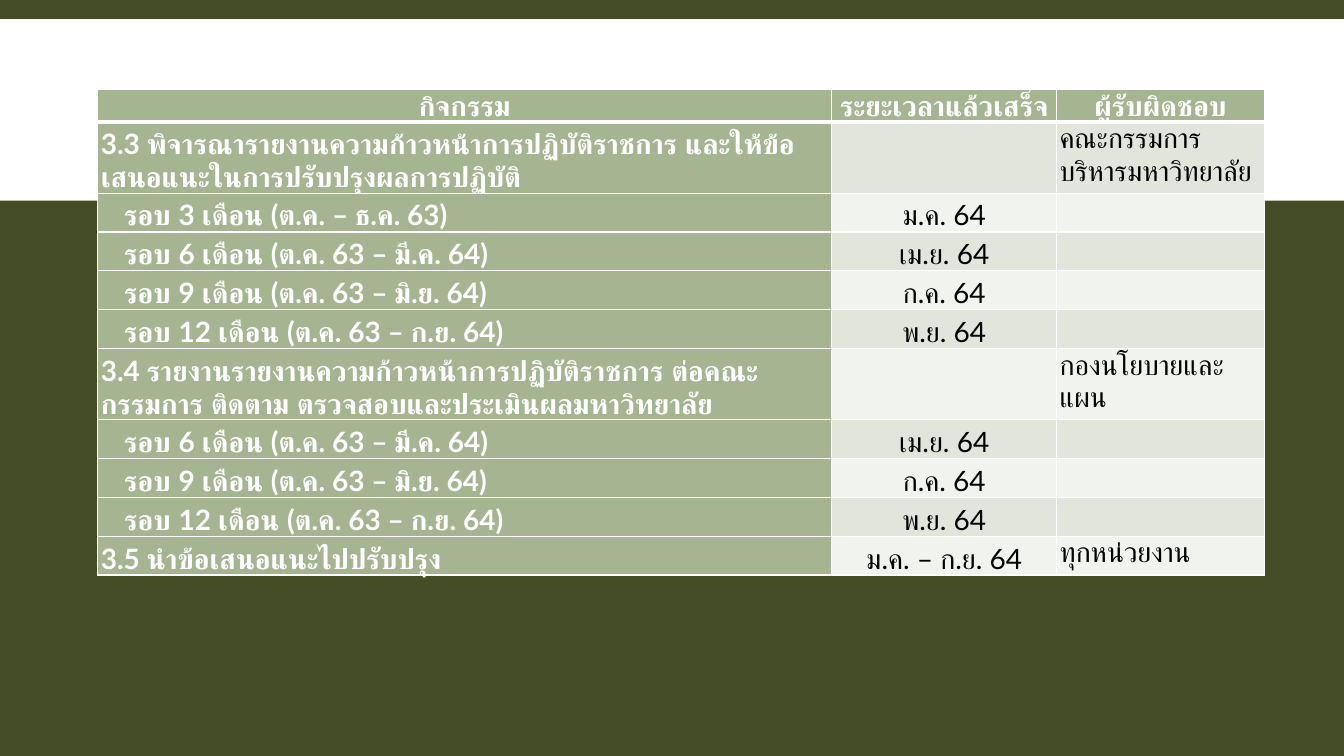
from lxml import etree
from pptx import Presentation
from pptx.dml.color import RGBColor
from pptx.enum.shapes import MSO_SHAPE
from pptx.enum.text import MSO_ANCHOR, PP_ALIGN
from pptx.oxml.ns import qn
from pptx.util import Inches, Pt

RECTANGLE = MSO_SHAPE.RECTANGLE
MIDDLE = MSO_ANCHOR.MIDDLE
LEFT, CENTER = PP_ALIGN.LEFT, PP_ALIGN.CENTER

FONT = "Lato"
WHITE, BLACK = "FFFFFF", "000000"
OLIVE, SAGE = "444D26", "A5B592"
BANDS = ("F0F3EE", "E1E5DC")

COLUMN_WIDTHS = (7.28, 2.23, 2.06)
HEADER_HEIGHT, ROUND_HEIGHT, ACTIVITY_HEIGHT = 0.31, 0.38, 0.7

HEADINGS = ("กิจกรรม", "ระยะเวลาแล้วเสร็จ", "ผู้รับผิดชอบ")
ROUND_3 = ("รอบ 3 เดือน (ต.ค. – ธ.ค. 63)", "ม.ค. 64", "")
LATER_ROUNDS = (
    ("รอบ 6 เดือน (ต.ค. 63 – มี.ค. 64)", "เม.ย. 64", ""),
    ("รอบ 9 เดือน (ต.ค. 63 – มิ.ย. 64)", "ก.ค. 64", ""),
    ("รอบ 12 เดือน (ต.ค. 63 – ก.ย. 64)", "พ.ย. 64", ""),
)
REVIEW = (
    "3.3 พิจารณารายงานความก้าวหน้าการปฏิบัติราชการ และให้ข้อเสนอแนะในการปรับปรุงผลการปฏิบัติ",
    "",
    "คณะกรรมการบริหารมหาวิทยาลัย",
)
REPORT = (
    "3.4 รายงานรายงานความก้าวหน้าการปฏิบัติราชการ ต่อคณะกรรมการ ติดตาม ตรวจสอบและประเมินผลมหาวิทยาลัย",
    "",
    "กองนโยบายและแผน",
)
IMPROVEMENT = ("3.5 นำข้อเสนอแนะไปปรับปรุง", "ม.ค. – ก.ย. 64", "ทุกหน่วยงาน")
PLAN = (HEADINGS, REVIEW, ROUND_3, *LATER_ROUNDS, REPORT, *LATER_ROUNDS, IMPROVEMENT)


def color(hex_value):
    return RGBColor.from_string(hex_value)


def draw_backdrop(slide, left, top, width, height):
    slide.background.fill.solid()
    slide.background.fill.fore_color.rgb = color(OLIVE)
    band = slide.shapes.add_shape(
        RECTANGLE, Inches(left), Inches(top), Inches(width), Inches(height)
    )
    band.shadow.inherit = False
    band.fill.solid()
    band.fill.fore_color.rgb = color(WHITE)
    band.line.fill.background()


def draw_borders(cell, row):
    properties = cell._tc.get_or_add_tcPr()
    widths = {"lnL": 1, "lnR": 1, "lnT": 3 if row == 1 else 1, "lnB": 3 if row == 0 else 1}
    for side, width in widths.items():
        border = etree.SubElement(properties, qn(f"a:{side}"), w=str(Pt(width)))
        fill = etree.SubElement(border, qn("a:solidFill"))
        etree.SubElement(fill, qn("a:srgbClr"), val=WHITE)


def write_cell(cell, text, row, column):
    cell.margin_left = cell.margin_right = Inches(0.03)
    cell.margin_top = cell.margin_bottom = 0
    if row == 0:
        cell.vertical_anchor = MIDDLE
    cell.text_frame.text = text
    paragraph = cell.text_frame.paragraphs[0]
    paragraph.line_spacing = 1.15
    paragraph.alignment = CENTER if row == 0 or column == 1 else LEFT
    if text.startswith("รอบ"):
        paragraph_properties = paragraph._p.get_or_add_pPr()
        paragraph_properties.set("marL", "0")
        paragraph_properties.set("indent", str(Inches(0.23)))
    emphasized = row == 0 or column == 0
    for run in paragraph.runs:
        run.font.size = Pt(20)
        run.font.name = FONT
        run.font.bold = emphasized
        run.font.color.rgb = color(WHITE if emphasized else BLACK)


def row_height(row, entries):
    if row == 0:
        return HEADER_HEIGHT
    return ACTIVITY_HEIGHT if entries in (REVIEW, REPORT) else ROUND_HEIGHT


def draw_plan(slide, left, top):
    heights = [row_height(row, entries) for row, entries in enumerate(PLAN)]
    plan = slide.shapes.add_table(
        len(PLAN), len(COLUMN_WIDTHS), Inches(left), Inches(top),
        Inches(sum(COLUMN_WIDTHS)), Inches(sum(heights)),
    ).table
    for column, width in enumerate(COLUMN_WIDTHS):
        plan.columns[column].width = Inches(width)
    for row, entries in enumerate(PLAN):
        plan.rows[row].height = Inches(heights[row])
        for column, text in enumerate(entries):
            cell = plan.cell(row, column)
            draw_borders(cell, row)
            cell.fill.solid()
            shade = SAGE if row == 0 or column == 0 else BANDS[row % 2]
            cell.fill.fore_color.rgb = color(shade)
            write_cell(cell, text, row, column)


def main():
    presentation = Presentation()
    presentation.slide_width = Inches(13.33)
    presentation.slide_height = Inches(7.5)
    slide = presentation.slides.add_slide(presentation.slide_layouts[6])
    draw_backdrop(slide, 0, 0.19, 13.33, 1.8)
    draw_plan(slide, 0.97, 0.89)
    presentation.save("out.pptx")


if __name__ == "__main__":
    main()
